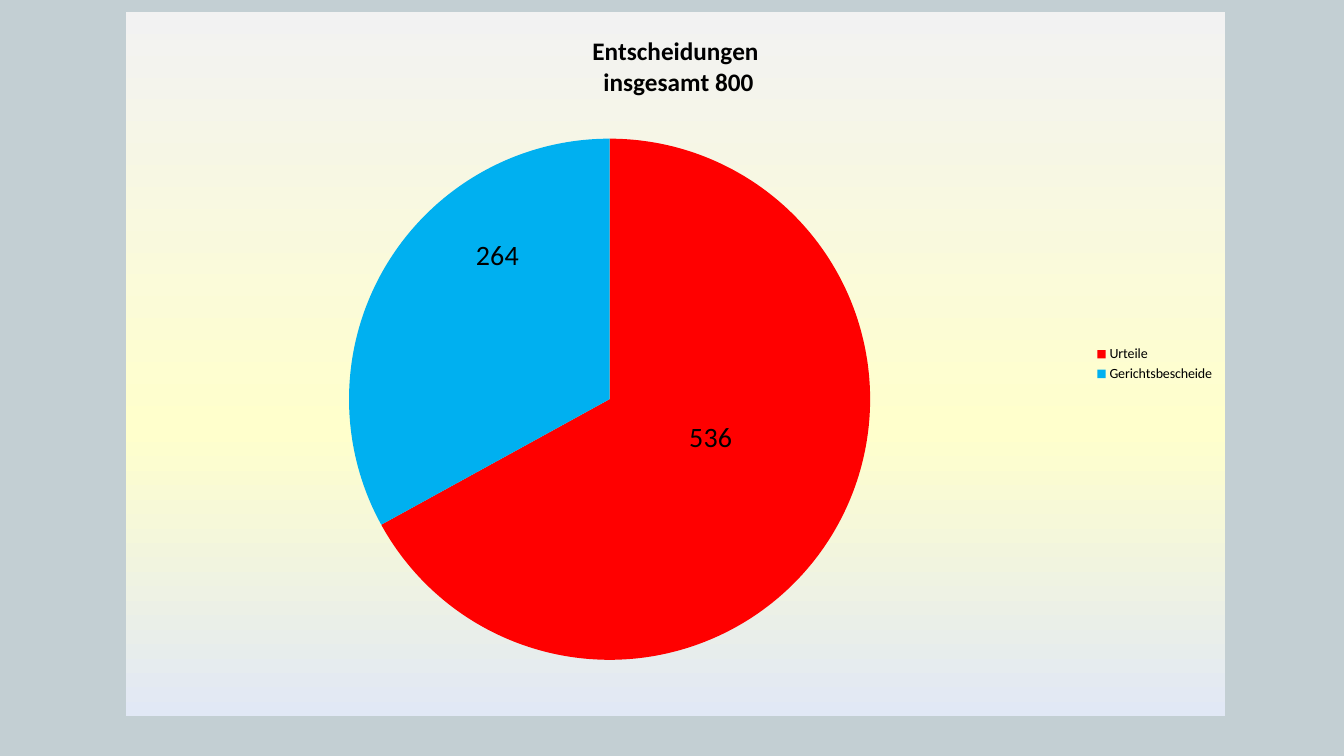
"""Build a slide with a pie chart of court decisions by kind."""
from dataclasses import dataclass

import pptx
import pptx.chart.data
import pptx.dml.color
import pptx.enum.chart
import pptx.oxml
import pptx.oxml.ns
import pptx.util
from pptx.dml.color import RGBColor
from pptx.util import Cm

BLACK = RGBColor(0x00, 0x00, 0x00)
RED = RGBColor(0xFF, 0x00, 0x00)
BLUE = RGBColor(0x00, 0xB0, 0xF0)
GREY = RGBColor(0xC3, 0xCF, 0xD3)
PALE = RGBColor(0xF2, 0xF2, 0xF2)
CREAM = RGBColor(0xFF, 0xFF, 0xCC)
ICE = RGBColor(0xE1, 0xE8, 0xF5)
FACE = "Calibri"


@dataclass(frozen=True)
class Slice:
    name: str
    value: int
    color: RGBColor
    dx: float
    dy: float


@dataclass(frozen=True)
class Stop:
    place: int
    color: RGBColor


SLICES = (
    Slice("Urteile", 536, RED, -0.01, -0.04),
    Slice("Gerichtsbescheide", 264, BLUE, 0, -0.11),
)
STOPS = (Stop(0, PALE), Stop(59, CREAM), Stop(100, ICE))


def style(font, size: float, bold: bool = False) -> None:
    font.name = FACE
    font.size = pptx.util.Pt(size)
    font.bold = bold
    font.color.rgb = BLACK


def layout(**parts):
    tags = "".join(f'<c:{tag} val="{val}"/>' for tag, val in parts.items())
    return pptx.oxml.parse_xml(
        f'<c:layout {pptx.oxml.ns.nsdecls("c")}>'
        f"<c:manualLayout>{tags}</c:manualLayout></c:layout>"
    )


def shade(chart, stops: tuple[Stop, ...]) -> None:
    marks = "".join(
        f'<a:gs pos="{stop.place * 1000}"><a:srgbClr val="{stop.color}"/></a:gs>'
        for stop in stops
    )
    fill = pptx.oxml.parse_xml(
        f'<c:spPr {pptx.oxml.ns.nsdecls("c", "a")}><a:gradFill><a:gsLst>{marks}'
        '</a:gsLst><a:lin ang="5400000" scaled="0"/></a:gradFill>'
        "<a:ln><a:noFill/></a:ln></c:spPr>"
    )
    chart.element.find(pptx.oxml.ns.qn("c:chart")).addnext(fill)


def place(chart) -> None:
    area = chart.element.find(".//" + pptx.oxml.ns.qn("c:plotArea"))
    for old in area.findall(pptx.oxml.ns.qn("c:layout")):
        area.remove(old)
    area.insert(0, layout(
        layoutTarget="inner", xMode="edge", yMode="edge",
        x=0.07, y=0.18, w=0.74, h=0.74,
    ))


def paint(series, slices: tuple[Slice, ...]) -> None:
    for index, part in enumerate(slices):
        point = series.points[index]
        point.format.fill.solid()
        point.format.fill.fore_color.rgb = part.color
        label = point.data_label
        style(label.font, 20)
        label.position = pptx.enum.chart.XL_LABEL_POSITION.CENTER
    tags = series.data_labels._element.findall(pptx.oxml.ns.qn("c:dLbl"))
    for tag, part in zip(tags, slices):
        tag.find(pptx.oxml.ns.qn("c:idx")).addnext(layout(x=part.dx, y=part.dy))
    style(series.data_labels.font, 20)
    series.data_labels.show_value = True


def draw(slide) -> None:
    data = pptx.chart.data.CategoryChartData()
    data.categories = [part.name for part in SLICES]
    data.add_series("Entscheidungen", [part.value for part in SLICES])
    chart = slide.shapes.add_chart(
        pptx.enum.chart.XL_CHART_TYPE.PIE,
        Cm(3.18), Cm(0.3), Cm(27.69), Cm(17.75), data,
    ).chart
    style(chart.font, 10)
    chart.has_title = True
    frame = chart.chart_title.text_frame
    frame.text = "Entscheidungen\n insgesamt 800"
    for line in frame.paragraphs:
        style(line.font, 18, True)
    chart.has_legend = True
    chart.legend.position = pptx.enum.chart.XL_LEGEND_POSITION.RIGHT
    chart.legend.include_in_layout = False
    style(chart.legend.font, 10)
    chart.plots[0].vary_by_categories = True
    paint(chart.plots[0].series[0], SLICES)
    place(chart)
    shade(chart, STOPS)


def main() -> None:
    deck = pptx.Presentation()
    deck.slide_width, deck.slide_height = Cm(33.87), Cm(19.05)
    slide = deck.slides.add_slide(deck.slide_layouts[6])
    slide.background.fill.solid()
    slide.background.fill.fore_color.rgb = GREY
    draw(slide)
    deck.save("out.pptx")


if __name__ == "__main__":
    main()
